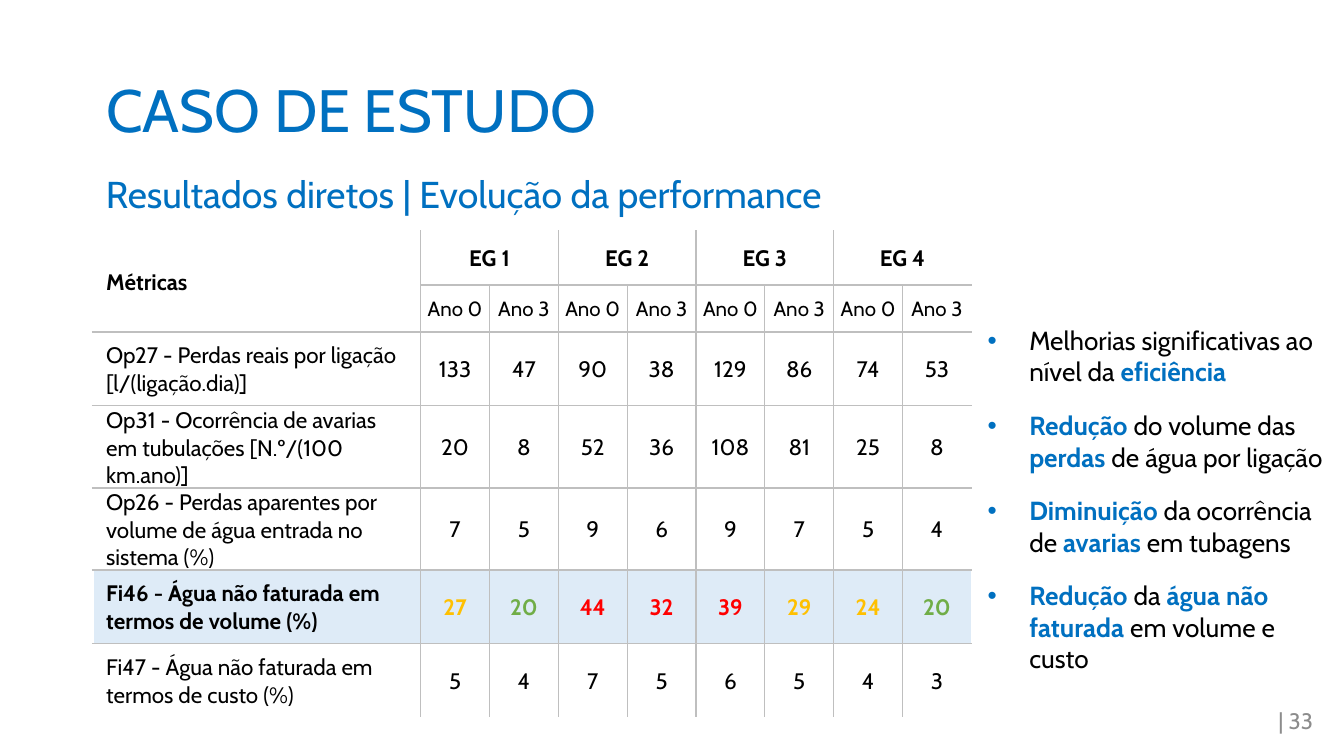
from lxml.etree import SubElement
from pptx import Presentation
from pptx.dml.color import RGBColor
from pptx.enum.text import MSO_ANCHOR, PP_ALIGN
from pptx.oxml.ns import qn
from pptx.util import Inches, Pt

FONT = "Cabin"
COLORS = {
    "blue": "0070C0", "black": "000000", "white": "FFFFFF", "gray": "8C8C8C",
    "rule": "BFBFBF", "band": "DEEBF7",
    "amber": "FFC000", "green": "70AD47", "red": "FF0000",
}
TABLE_WIDTH = 6.54
METRIC_WIDTH = 2.44
GROUPS = ["EG 1", "EG 2", "EG 3", "EG 4"]
METRICS = [
    ("Op27 - Perdas reais por ligação [l/(ligação.dia)]",
     [133, 47, 90, 38, 129, 86, 74, 53]),
    ("Op31 - Ocorrência de avarias em tubulações [N.º/(100 km.ano)]",
     [20, 8, 52, 36, 108, 81, 25, 8]),
    ("Op26 - Perdas aparentes por volume de água entrada no sistema (%)",
     [7, 5, 9, 6, 9, 7, 5, 4]),
    ("Fi46 - Água não faturada em termos de volume (%)",
     [27, 20, 44, 32, 39, 29, 24, 20]),
    ("Fi47 - Água não faturada em termos de custo (%)",
     [5, 4, 7, 5, 6, 5, 4, 3]),
]
HIGHLIGHT_ROW = 5
# Words between asterisks are emphasised.
FINDINGS = [
    "Melhorias significativas ao nível da *eficiência*",
    "*Redução* do volume das *perdas* de água por ligação",
    "*Diminuição* da ocorrência de *avarias* em tubagens",
    "*Redução* da *água não faturada* em volume e custo",
]


def rgb(name):
    return RGBColor.from_string(COLORS[name])


def format_run(r, size, color="black", bold=False):
    r.font.name = FONT
    r.font.size = Pt(size)
    r.font.color.rgb = rgb(color)
    r.font.bold = bold


def write_line(tf, text, size, color="black", bold=False, align=PP_ALIGN.LEFT):
    tf.text = text
    p = tf.paragraphs[0]
    p.alignment = align
    format_run(p.runs[0], size, color, bold)
    return p


def add_text_box(s, left, top, width, height, anchor=MSO_ANCHOR.TOP):
    sp = s.shapes.add_textbox(Inches(left), Inches(top), Inches(width), Inches(height))
    tf = sp.text_frame
    tf.word_wrap = True
    tf.vertical_anchor = anchor
    return tf


def add_title(s, text):
    sp = s.shapes.title
    sp.left, sp.top = Inches(0.69), Inches(0.3)
    sp.width, sp.height = Inches(8.62), Inches(1.09)
    sp.text_frame.vertical_anchor = MSO_ANCHOR.MIDDLE
    write_line(sp.text_frame, text, 32, "blue").line_spacing = 0.9


def add_subtitle(s, text):
    tf = add_text_box(s, 0.69, 1.26, 6.66, 0.4)
    write_line(tf, text, 20, "blue").line_spacing = 0.9


def add_page_number(s, text):
    tf = add_text_box(s, 7.59, 5.21, 2.25, 0.3, MSO_ANCHOR.MIDDLE)
    tf.margin_left = tf.margin_right = Inches(0.07)
    tf.margin_top = tf.margin_bottom = Inches(0.04)
    write_line(tf, text, 12, "gray", align=PP_ALIGN.RIGHT)


def set_borders(cell, outer_sides):
    """Draw gray rules, but white ones on the outer sides of the table."""
    tc_pr = cell._tc.get_or_add_tcPr()
    for side in "LRTB":
        outer = side in outer_sides
        ln = SubElement(tc_pr, qn(f"a:ln{side}"), w=str(Pt(1 if outer else 0.75)))
        fill = SubElement(ln, qn("a:solidFill"))
        SubElement(fill, qn("a:srgbClr"), val=COLORS["white" if outer else "rule"])


def style_cell(cell, row, col, n_rows, n_cols):
    span = cell.span_width if cell.is_merge_origin else 1
    edges = {"L": col == 0, "R": col + span == n_cols,
             "T": row == 0, "B": row == n_rows - 1}
    set_borders(cell, [side for side, outer in edges.items() if outer])
    if row == HIGHLIGHT_ROW:
        cell.fill.solid()
        cell.fill.fore_color.rgb = rgb("band")
    else:
        cell.fill.background()
    cell.vertical_anchor = MSO_ANCHOR.MIDDLE
    cell.margin_left = cell.margin_right = Inches(0.04 if col else 0.1)
    cell.margin_top, cell.margin_bottom = Inches(0.01), 0


def rating_color(value):
    return "green" if value <= 20 else "amber" if value < 30 else "red"


def add_metrics_table(s):
    n_rows, n_cols = len(METRICS) + 2, 2 * len(GROUPS) + 1
    table = s.shapes.add_table(n_rows, n_cols, Inches(0.69), Inches(1.72),
                               Inches(TABLE_WIDTH), Inches(3.56)).table
    value_width = (TABLE_WIDTH - METRIC_WIDTH) / (n_cols - 1)
    for i, column in enumerate(table.columns):
        column.width = Inches(value_width if i else METRIC_WIDTH)
    for row, height in zip(table.rows, [0.4, 0.35] + [0.55] * len(METRICS)):
        row.height = Inches(height)

    table.cell(0, 0).merge(table.cell(1, 0))
    for col in range(1, n_cols, 2):
        table.cell(0, col).merge(table.cell(0, col + 1))
    for row in range(n_rows):
        for col in range(n_cols):
            style_cell(table.cell(row, col), row, col, n_rows, n_cols)

    center = PP_ALIGN.CENTER
    write_line(table.cell(0, 0).text_frame, "Métricas", 12, bold=True)
    for i, group in enumerate(GROUPS):
        col = 2 * i + 1
        write_line(table.cell(0, col).text_frame, group, 12, bold=True, align=center)
        for j, year in enumerate(["Ano 0", "Ano 3"]):
            write_line(table.cell(1, col + j).text_frame, year, 11, align=center)
    for row, (metric, values) in enumerate(METRICS, 2):
        key = row == HIGHLIGHT_ROW
        write_line(table.cell(row, 0).text_frame, metric, 12, bold=key)
        for col, value in enumerate(values, 1):
            color = rating_color(value) if key else "black"
            write_line(table.cell(row, col).text_frame, str(value), 12, color, key, center)


def add_bullet(p):
    p_pr = p._p.get_or_add_pPr()
    p_pr.set("marL", str(Inches(0.31)))
    p_pr.set("indent", str(Inches(-0.31)))
    color = SubElement(p_pr, qn("a:buClr"))
    SubElement(color, qn("a:srgbClr"), val=COLORS["blue"])
    SubElement(p_pr, qn("a:buFont"), typeface="Arial")
    SubElement(p_pr, qn("a:buChar"), char="•")


def add_findings(s):
    tf = add_text_box(s, 7.25, 2.35, 2.72, 2.73, MSO_ANCHOR.MIDDLE)
    for i, finding in enumerate(FINDINGS):
        p = tf.add_paragraph() if i else tf.paragraphs[0]
        add_bullet(p)
        p.space_after = Pt(12)
        for j, part in enumerate(finding.split("*")):
            if part:
                r = p.add_run()
                r.text = part
                strong = j % 2 == 1
                format_run(r, 14, "blue" if strong else "black", strong)


def main():
    prs = Presentation()
    prs.slide_width = Inches(10)
    prs.slide_height = prs.slide_width * 9 // 16
    s = prs.slides.add_slide(prs.slide_layouts[5])
    add_page_number(s, "| 33")
    add_title(s, "CASO DE ESTUDO")
    add_subtitle(s, "Resultados diretos | Evolução da performance")
    add_metrics_table(s)
    add_findings(s)
    prs.save("out.pptx")


if __name__ == "__main__":
    main()
